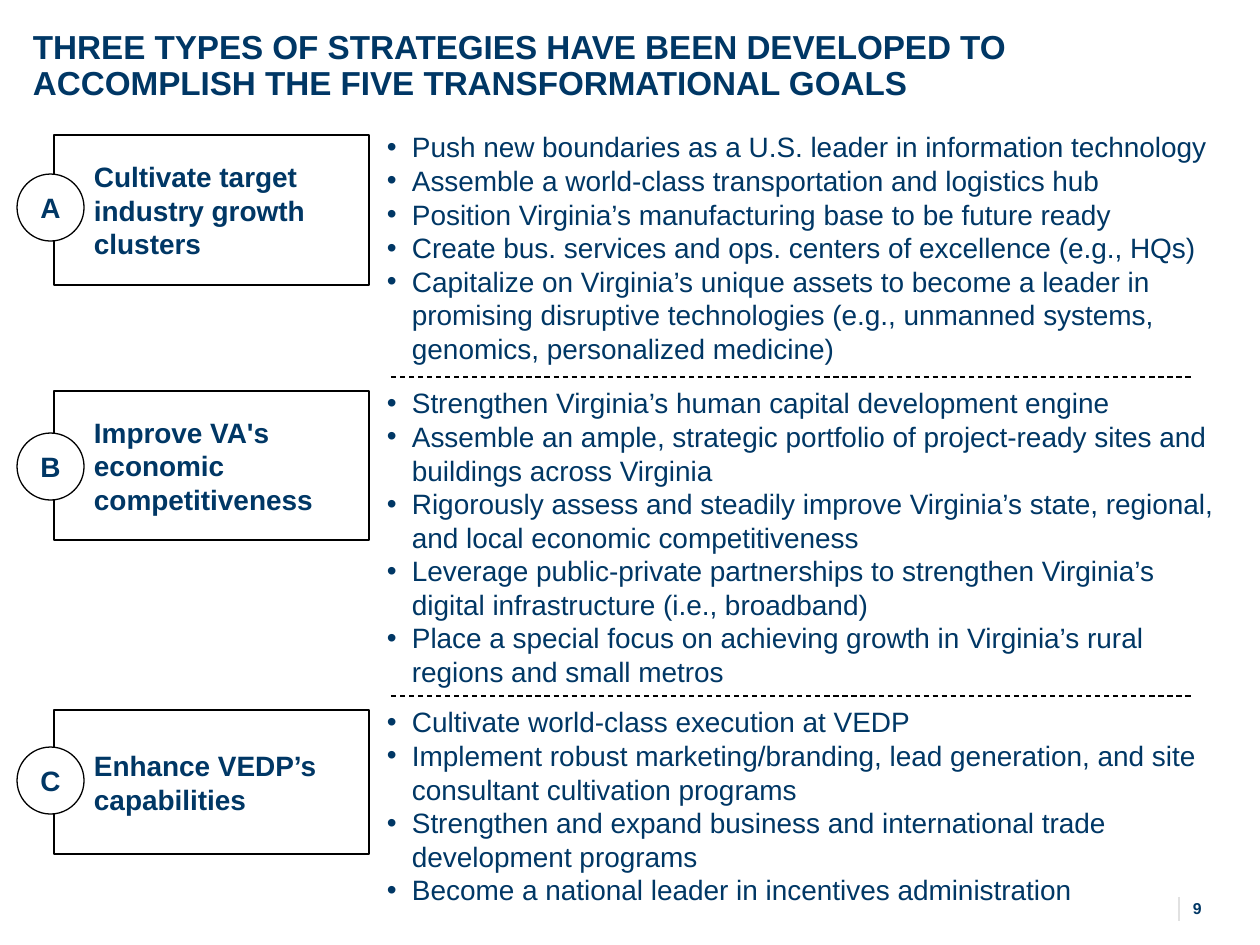
"""Build the slide that lists three types of strategies for the transformational goals."""
from lxml.etree import SubElement
from pptx import Presentation
from pptx.dml.color import RGBColor
from pptx.enum.dml import MSO_LINE
from pptx.enum.shapes import MSO_CONNECTOR, MSO_SHAPE
from pptx.enum.text import MSO_ANCHOR, PP_ALIGN
from pptx.oxml.ns import qn
from pptx.util import Emu, Pt

COLORS = {"navy": "003765", "black": "000000", "white": "FFFFFF", "gray": "E1E1E1"}
TITLE = "THREE TYPES OF STRATEGIES HAVE BEEN DEVELOPED TO ACCOMPLISH THE FIVE TRANSFORMATIONAL GOALS"
PAGE_NUMBER = "9"
STRATEGIES = [
    {"letter": "A", "name": "Cultivate target industry growth clusters",
     "top": 130, "height": 237, "box_height": 150, "badge_top": 174,
     "actions": [
         "Push new boundaries as a U.S. leader in information technology",
         "Assemble a world-class transportation and logistics hub",
         "Position Virginia’s manufacturing base to be future ready",
         "Create bus. services and ops. centers of excellence (e.g., HQs)",
         "Capitalize on Virginia’s unique assets to become a leader in promising disruptive "
         "technologies (e.g., unmanned systems, genomics, personalized medicine)"]},
    {"letter": "B", "name": "Improve VA's economic competitiveness",
     "top": 386, "height": 305, "box_height": 149, "badge_top": 433,
     "actions": [
         "Strengthen Virginia’s human capital development engine",
         "Assemble an ample, strategic portfolio of project-ready sites and buildings across Virginia",
         "Rigorously assess and steadily improve Virginia’s state, regional, and local economic "
         "competitiveness",
         "Leverage public-private partnerships to strengthen Virginia’s digital infrastructure "
         "(i.e., broadband)",
         "Place a special focus on achieving growth in Virginia’s rural regions and small metros"]},
    {"letter": "C", "name": "Enhance VEDP’s capabilities",
     "top": 705, "height": 204, "box_height": 144, "badge_top": 747,
     "actions": [
         "Cultivate world-class execution at VEDP",
         "Implement robust marketing/branding, lead generation, and site consultant cultivation programs",
         "Strengthen and expand business and international trade development programs",
         "Become a national leader in incentives administration"]},
]
BOX_LEFT, BOX_WIDTH, BOX_DROP = 54, 315, 5
BADGE_LEFT, BADGE_SIZE = 17, 67
ACTIONS_LEFT, ACTIONS_WIDTH, BULLET_INDENT = 387, 847, 25
DIVIDER_LEFT, DIVIDER_RIGHT, DIVIDER_GAP = 391, 1193, 9


def px(length):
    return Emu(round(length * 914400 / 126))


def color(name):
    return RGBColor.from_string(COLORS[name])


def write(shape, *paragraphs, size=16, bold=True, align=PP_ALIGN.LEFT, anchor=MSO_ANCHOR.MIDDLE,
          insets=(0, 0, 0, 0), wrap=True, spacing=None, bullet=False):
    frame = shape.text_frame
    frame.word_wrap = wrap
    frame.vertical_anchor = anchor
    frame.margin_left, frame.margin_top, frame.margin_right, frame.margin_bottom = map(px, insets)
    for index, text in enumerate(paragraphs):
        paragraph = frame.add_paragraph() if index else frame.paragraphs[0]
        paragraph.alignment = align
        if spacing:
            paragraph.line_spacing = spacing
        if bullet:
            properties = paragraph._p.get_or_add_pPr()
            properties.set("marL", str(px(BULLET_INDENT)))
            properties.set("indent", str(-px(BULLET_INDENT)))
            SubElement(properties, qn("a:buFont"), typeface="Arial")
            SubElement(properties, qn("a:buChar"), char="•")
        run = paragraph.add_run()
        run.text = text
        run.font.name = "Arial"
        run.font.size = Pt(size)
        run.font.bold = bold
        run.font.color.rgb = color("navy")


def add_text(slide, bounds, *paragraphs, **text_format):
    write(slide.shapes.add_textbox(*map(px, bounds)), *paragraphs, **text_format)


def add_outlined(slide, preset, bounds, label, **text_format):
    shape = slide.shapes.add_shape(preset, *map(px, bounds))
    shape.shadow.inherit = False
    shape.fill.solid()
    shape.fill.fore_color.rgb = color("white")
    shape.line.color.rgb = color("black")
    shape.line.width = Pt(0.75)
    write(shape, label, **text_format)


def add_line(slide, ends, line_color="black", width=0.75, dash=None):
    connector = slide.shapes.add_connector(MSO_CONNECTOR.STRAIGHT, *map(px, ends))
    connector.line.color.rgb = color(line_color)
    connector.line.width = Pt(width)
    if dash:
        connector.line.dash_style = dash
    SubElement(connector._element.spPr, qn("a:effectLst"))


def add_strategy(slide, strategy):
    top = strategy["top"]
    add_outlined(slide, MSO_SHAPE.RECTANGLE,
                 (BOX_LEFT, top + BOX_DROP, BOX_WIDTH, strategy["box_height"]),
                 strategy["name"], insets=(40, 0, 9, 0))
    add_text(slide, (ACTIONS_LEFT, top, ACTIONS_WIDTH, strategy["height"]), *strategy["actions"],
             bold=False, anchor=MSO_ANCHOR.TOP, bullet=True)
    add_outlined(slide, MSO_SHAPE.OVAL,
                 (BADGE_LEFT, strategy["badge_top"], BADGE_SIZE, BADGE_SIZE),
                 strategy["letter"], align=PP_ALIGN.CENTER, wrap=False)


def main():
    deck = Presentation()
    deck.slide_width, deck.slide_height = px(1260), px(945)
    slide = deck.slides.add_slide(deck.slide_layouts[6])
    add_line(slide, (1179, 897, 1179, 921), line_color="gray", width=1.5)
    add_text(slide, (1193, 893, 63, 32), PAGE_NUMBER, size=9, anchor=MSO_ANCHOR.TOP,
             insets=(0, 6, 0, 6))
    add_text(slide, (20, 25, 1217, 84), TITLE, size=19, spacing=0.9, insets=(13, 6, 13, 6))
    for strategy in STRATEGIES:
        add_strategy(slide, strategy)
    for following in STRATEGIES[1:]:
        y = following["top"] - DIVIDER_GAP
        add_line(slide, (DIVIDER_LEFT, y, DIVIDER_RIGHT, y), dash=MSO_LINE.DASH)
    deck.save("out.pptx")


if __name__ == "__main__":
    main()
